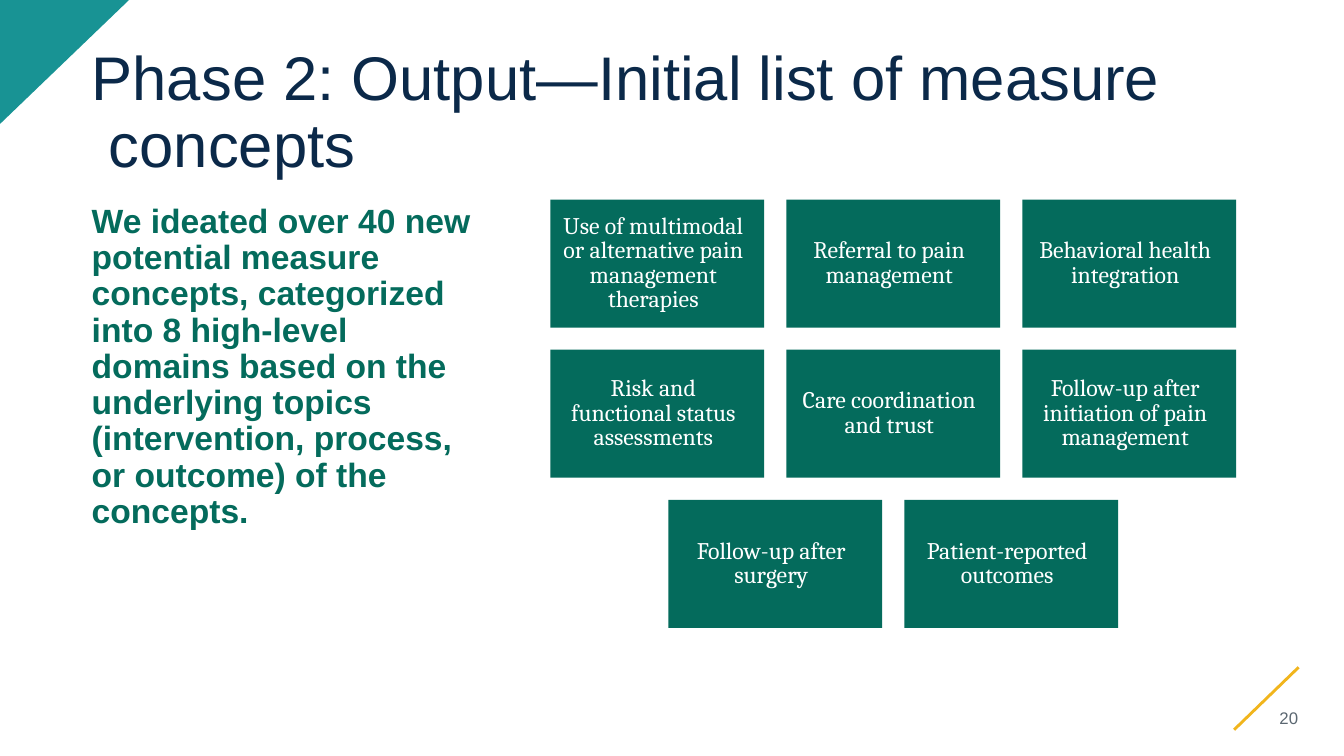
from lxml.etree import SubElement
from pptx import Presentation
from pptx.dml.color import RGBColor
from pptx.enum.shapes import MSO_CONNECTOR, MSO_SHAPE
from pptx.enum.text import MSO_ANCHOR, PP_ALIGN
from pptx.oxml.ns import qn
from pptx.util import Inches, Pt

NAVY, GREEN, TEAL = "0B2949", "046B5C", "189394"
GOLD, GRAY, WHITE = "F1B51C", "5B6771", "FFFFFF"

DOMAIN_ROWS = [
    ["Use of multimodal\vor alternative pain\vmanagement\vtherapies",
     "Referral to pain\vmanagement",
     "Behavioral health\vintegration"],
    ["Risk and\vfunctional status\vassessments",
     "Care coordination\vand trust",
     "Follow-up after\vinitiation of pain\vmanagement"],
    ["Follow-up after\vsurgery",
     "Patient-reported\voutcomes"],
]
BOX_W, BOX_H = 2.12, 1.27
STEP_X, STEP_Y = 2.34, 1.49
GRID_CENTER, GRID_TOP = 8.86, 1.98


def rgb(value):
    return RGBColor.from_string(value)


def write(tf, text, size, color, line, font="Arial", bold=False,
          align=PP_ALIGN.LEFT, anchor=MSO_ANCHOR.TOP, right=0, hanging=0):
    """Fill a text frame with one paragraph; line is its spacing in points."""
    tf.word_wrap = True
    tf.vertical_anchor = anchor
    tf.margin_left = tf.margin_top = tf.margin_bottom = 0
    tf.margin_right = Inches(right)
    p = tf.paragraphs[0]
    p.text = text
    p.alignment = align
    p.line_spacing = Pt(line)
    if hanging:
        pPr = p._p.get_or_add_pPr()
        pPr.set("marL", str(Inches(hanging)))
        pPr.set("indent", str(-Inches(hanging)))
    for r in p.runs:
        r.font.name = font
        r.font.size = Pt(size)
        r.font.bold = bold
        r.font.color.rgb = rgb(color)


class Page:
    def __init__(self, s):
        self.s = s

    def text(self, x, y, w, h, text, **style):
        sp = self.s.shapes.add_textbox(Inches(x), Inches(y), Inches(w), Inches(h))
        write(sp.text_frame, text, **style)

    def box(self, x, y, text):
        sp = self.s.shapes.add_shape(MSO_SHAPE.RECTANGLE, Inches(x), Inches(y),
                                     Inches(BOX_W), Inches(BOX_H))
        self.paint(sp, GREEN)
        write(sp.text_frame, text, size=17, color=WHITE, line=17.4,
              font="Cambria", align=PP_ALIGN.CENTER,
              anchor=MSO_ANCHOR.MIDDLE, right=0.08)

    def polygon(self, points, color):
        start, *rest = [(Inches(x), Inches(y)) for x, y in points]
        builder = self.s.shapes.build_freeform(*start)
        builder.add_line_segments(rest, close=True)
        self.paint(builder.convert_to_shape(), color)

    def line(self, x1, y1, x2, y2, color, width):
        c = self.s.shapes.add_connector(MSO_CONNECTOR.STRAIGHT, Inches(x1),
                                        Inches(y1), Inches(x2), Inches(y2))
        c.line.color.rgb = rgb(color)
        c.line.width = Pt(width)
        SubElement(c._element.spPr, qn("a:effectLst"))

    def paint(self, sp, color):
        sp.shadow.inherit = False
        sp.fill.solid()
        sp.fill.fore_color.rgb = rgb(color)
        sp.line.fill.background()


def main():
    prs = Presentation()
    prs.slide_width, prs.slide_height = Inches(13.33), Inches(7.5)
    page = Page(prs.slides.add_slide(prs.slide_layouts[6]))

    page.polygon([(0, 0), (1.28, 0), (0, 1.23)], TEAL)
    page.line(12.24, 7.24, 12.88, 6.62, GOLD, 2.04)
    page.text(0.91, 0.46, 10.8, 1.33,
              "Phase 2: Output—Initial list of measure concepts",
              size=44, color=NAVY, line=47.5, hanging=0.17)
    page.text(0.91, 2.02, 3.85, 3.25,
              "We ideated over 40 new potential measure concepts, categorized "
              "into 8 high-level domains based on the underlying topics "
              "(intervention, process, or outcome) of the concepts.",
              size=24, color=GREEN, line=25.9, bold=True)

    for i, labels in enumerate(DOMAIN_ROWS):
        row_width = (len(labels) - 1) * STEP_X + BOX_W
        left = GRID_CENTER - row_width / 2
        for j, label in enumerate(labels):
            page.box(left + j * STEP_X, GRID_TOP + i * STEP_Y, label)

    page.text(12.69, 7.02, 0.24, 0.21, "20", size=12, color=GRAY, line=14.2)
    prs.save("out.pptx")


if __name__ == "__main__":
    main()
